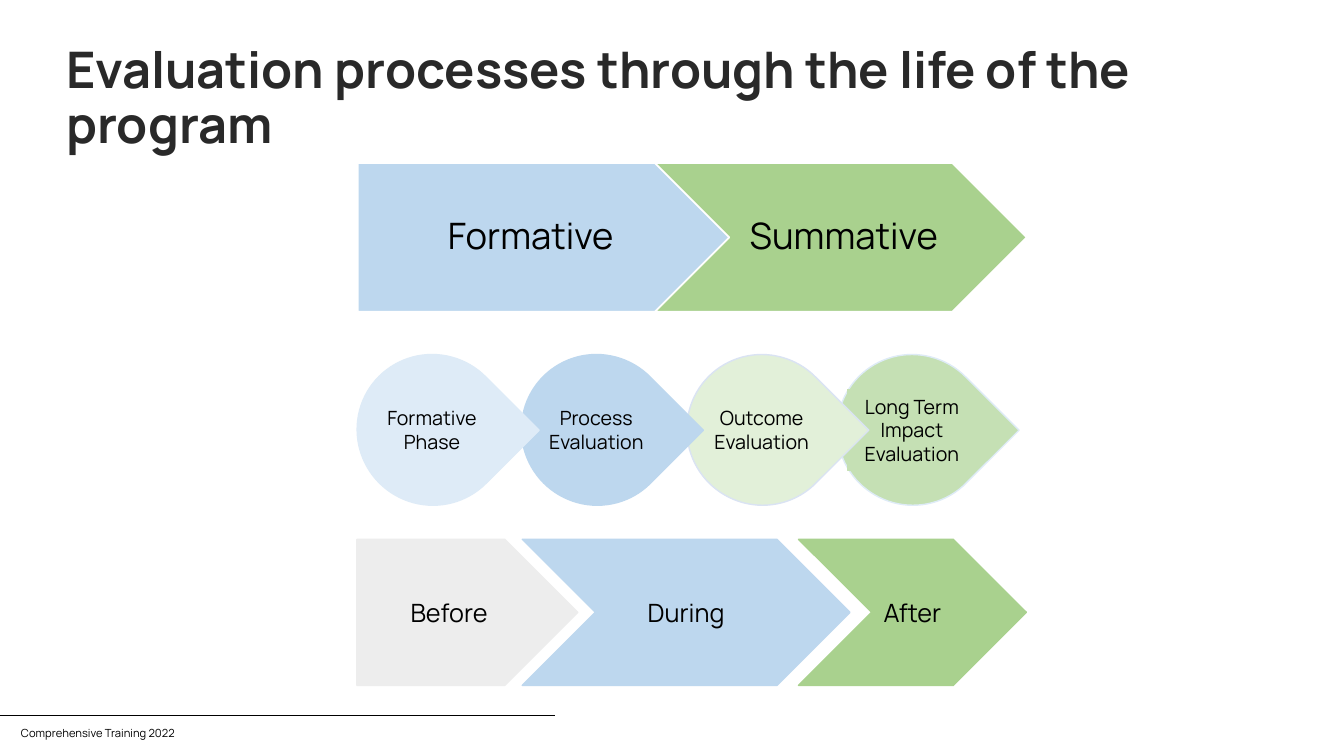
from lxml import etree
from pptx import Presentation
from pptx.dml.color import RGBColor
from pptx.enum.shapes import MSO_CONNECTOR, MSO_SHAPE
from pptx.enum.text import MSO_ANCHOR, PP_ALIGN
from pptx.oxml.ns import qn
from pptx.util import Inches, Pt

PENTAGON = MSO_SHAPE.PENTAGON
CHEVRON = MSO_SHAPE.CHEVRON
TEARDROP = MSO_SHAPE.TEAR
RECTANGLE = MSO_SHAPE.RECTANGLE
STRAIGHT = MSO_CONNECTOR.STRAIGHT
TOP, MIDDLE = MSO_ANCHOR.TOP, MSO_ANCHOR.MIDDLE
LEFT, CENTER = PP_ALIGN.LEFT, PP_ALIGN.CENTER

BLACK = RGBColor(0x00, 0x00, 0x00)
WHITE = RGBColor(0xFF, 0xFF, 0xFF)
CHARCOAL = RGBColor(0x29, 0x29, 0x29)
GRAY = RGBColor(0xED, 0xED, 0xED)
BLUE = RGBColor(0xBD, 0xD7, 0xEE)
PALE_BLUE = RGBColor(0xDE, 0xEB, 0xF7)
ICE_BLUE = RGBColor(0xDA, 0xE3, 0xF3)
GREEN = RGBColor(0xA9, 0xD1, 0x8E)
SOFT_GREEN = RGBColor(0xC5, 0xE0, 0xB4)
PALE_GREEN = RGBColor(0xE2, 0xF0, 0xD9)


class SlideBuilder:
    """Draws styled elements on the current slide."""

    font_name = "Manrope"

    def __init__(self, slide):
        self.slide = slide

    def set_text(self, shape, text, size, color=BLACK, bold=False, align=CENTER,
                 anchor=MIDDLE, spacing=1.0, insets=(0.1, 0.05, 0.1, 0.05)):
        frame = shape.text_frame
        frame.word_wrap = True
        frame.vertical_anchor = anchor
        (frame.margin_left, frame.margin_top,
         frame.margin_right, frame.margin_bottom) = map(Inches, insets)
        paragraph = frame.paragraphs[0]
        paragraph.text = text
        paragraph.alignment = align
        paragraph.line_spacing = spacing
        paragraph.font.name = self.font_name
        paragraph.font.size = Pt(size)
        paragraph.font.bold = bold
        paragraph.font.color.rgb = color

    def text_box(self, box, text, size, **style):
        shape = self.slide.shapes.add_textbox(*map(Inches, box))
        self.set_text(shape, text, size, **style)

    def shape(self, kind, box, fill, outline, width=1):
        shape = self.slide.shapes.add_shape(kind, *map(Inches, box))
        shape.shadow.inherit = False
        shape.fill.solid()
        shape.fill.fore_color.rgb = fill
        shape.line.color.rgb = outline
        shape.line.width = Pt(width)
        return shape

    def rule(self, left, right, top):
        line = self.slide.shapes.add_connector(
            STRAIGHT, Inches(left), Inches(top), Inches(right), Inches(top))
        line.line.color.rgb = BLACK
        line.line.width = Pt(0.5)
        etree.SubElement(line._element.spPr, qn("a:effectLst"))

    def drop(self, left, text, fill, outline, label_height):
        top, width, height = 3.52, 1.5, 1.49
        drop = self.shape(TEARDROP, (left, top, width, height), fill, outline)
        drop.rotation = 45
        label_top = top + (height - label_height) / 2
        label = self.shape(RECTANGLE, (left + 0.11, label_top, 1.27, label_height),
                           fill, fill, 0.75)
        self.set_text(label, text, 14)


def main():
    presentation = Presentation()
    presentation.slide_width = Inches(13.33)
    presentation.slide_height = Inches(7.5)
    builder = SlideBuilder(presentation.slides.add_slide(presentation.slide_layouts[6]))

    builder.text_box((0.11, 7.15, 4.39, 0.24), "Comprehensive Training 2022", 8, align=LEFT)
    builder.rule(0, 5.5, 7.1)
    builder.text_box((0.56, 0.4, 11.5, 0.85),
                     "Evaluation processes through the life of the program", 36,
                     color=CHARCOAL, bold=True, align=LEFT, anchor=TOP, spacing=0.9)

    for kind, left, fill, text, text_left, text_width, inset in (
            (PENTAGON, 3.55, BLUE, "Formative", 3.55, 3.32, 0.15),
            (CHEVRON, 6.5, GREEN, "Summative", 7.23, 2.21, 0.11)):
        builder.shape(kind, (left, 1.62, 3.68, 1.47), fill, WHITE)
        builder.text_box((text_left, 1.62, text_width, 1.47), text, 26, spacing=0.9,
                         insets=(inset, 0.08, 0.04, 0.08))

    for left, text, fill, outline, label_height in (
            (8.3, "Long Term Impact Evaluation", SOFT_GREEN, PALE_BLUE, 0.81),
            (6.81, "Outcome Evaluation", PALE_GREEN, ICE_BLUE, 0.57),
            (5.17, "Process Evaluation", BLUE, BLUE, 0.57),
            (3.54, "Formative Phase", PALE_BLUE, PALE_BLUE, 0.57)):
        builder.drop(left, text, fill, outline, label_height)

    for kind, left, width, fill, text in (
            (PENTAGON, 3.54, 2.19, GRAY, "Before"),
            (CHEVRON, 5.18, 3.25, BLUE, "During"),
            (CHEVRON, 7.92, 2.26, GREEN, "After")):
        stage = builder.shape(kind, (left, 5.35, width, 1.45), fill, fill)
        builder.set_text(stage, text, 18)

    presentation.save("out.pptx")


if __name__ == "__main__":
    main()
